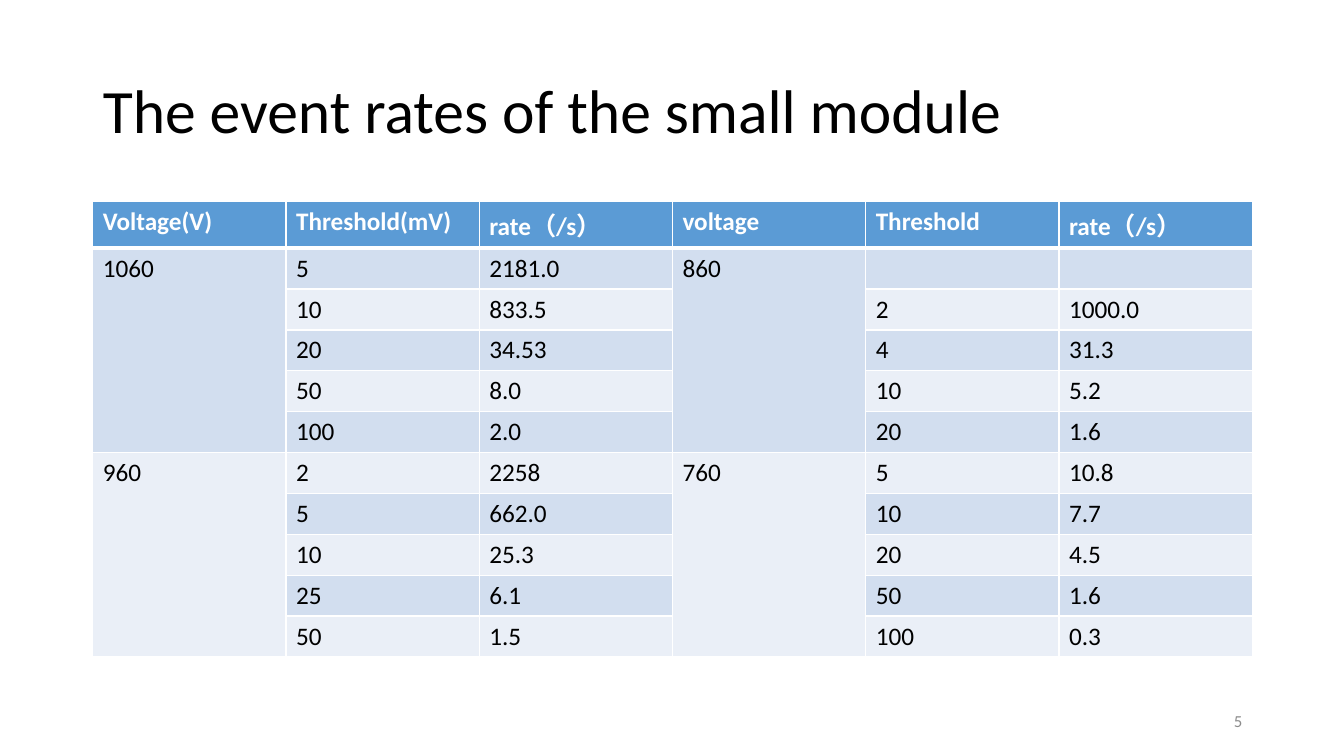
import pptx
import pptx.dml.color
import pptx.enum.text
import pptx.oxml
import pptx.oxml.ns
import pptx.util
from pptx.dml.color import RGBColor
from pptx.util import Inches

BLACK = RGBColor(0x00, 0x00, 0x00)
WHITE = RGBColor(0xFF, 0xFF, 0xFF)
GRAY = RGBColor(0x8C, 0x8C, 0x8C)
HEADER_BLUE = RGBColor(0x5B, 0x9B, 0xD5)
BAND_DARK = RGBColor(0xD2, 0xDE, 0xEF)
BAND_LIGHT = RGBColor(0xEA, 0xEF, 0xF7)

HEADINGS = ["Voltage(V)", "Threshold(mV)", "rate（/s）", "voltage", "Threshold", "rate（/s）"]
GROUP_SIZE = 5
LEFT_GROUPS = [
    ("1060", [("5", "2181.0"), ("10", "833.5"), ("20", "34.53"), ("50", "8.0"), ("100", "2.0")]),
    ("960", [("2", "2258"), ("5", "662.0"), ("10", "25.3"), ("25", "6.1"), ("50", "1.5")]),
]
RIGHT_GROUPS = [
    ("860", [("", ""), ("2", "1000.0"), ("4", "31.3"), ("10", "5.2"), ("20", "1.6")]),
    ("760", [("5", "10.8"), ("10", "7.7"), ("20", "4.5"), ("50", "1.6"), ("100", "0.3")]),
]


def write_text(frame, text, size=18, color=BLACK, bold=False, align=None, spacing=None):
    para = frame.paragraphs[0]
    para.alignment = align
    para.line_spacing = spacing
    para.font.size = pptx.util.Pt(size)
    if text:
        span = para.add_run()
        span.text = text
        span.font.name = "Calibri"
        span.font.size = pptx.util.Pt(size)
        span.font.bold = bold
        span.font.color.rgb = color


def set_borders(cell, top, bottom):
    properties = cell._tc.get_or_add_tcPr()
    widths = [("lnL", 1), ("lnR", 1), ("lnT", top), ("lnB", bottom)]
    for position, (side, points) in enumerate(widths):
        line = pptx.oxml.parse_xml(
            f'<a:{side} {pptx.oxml.ns.nsdecls("a")} w="{pptx.util.Pt(points)}">'
            f'<a:solidFill><a:srgbClr val="{WHITE}"/></a:solidFill></a:{side}>'
        )
        properties.insert(position, line)


def add_title(page, left, top, width, height):
    title = page.shapes.title
    title.left, title.top, title.width, title.height = left, top, width, height
    title.text_frame.vertical_anchor = pptx.enum.text.MSO_ANCHOR.MIDDLE
    write_text(title.text_frame, "The event rates of the small module", size=44,
               align=pptx.enum.text.PP_ALIGN.LEFT, spacing=0.9)


def fill_groups(table, groups, first_column):
    for group_index, (voltage, readings) in enumerate(groups):
        first_row = 1 + group_index * GROUP_SIZE
        voltage_cell = table.cell(first_row, first_column)
        write_text(voltage_cell.text_frame, voltage)
        for row, reading in enumerate(readings, first_row):
            for column, value in enumerate(reading, first_column + 1):
                write_text(table.cell(row, column).text_frame, value)
        voltage_cell.merge(table.cell(first_row + GROUP_SIZE - 1, first_column))


def add_rate_table(page, left, top, width, height):
    row_count = 1 + GROUP_SIZE * len(LEFT_GROUPS)
    table = page.shapes.add_table(row_count, len(HEADINGS), left, top, width, height).table
    for column, heading in enumerate(HEADINGS):
        write_text(table.cell(0, column).text_frame, heading, color=WHITE, bold=True)
    for row in range(row_count):
        band = HEADER_BLUE if row == 0 else BAND_DARK if row % 2 else BAND_LIGHT
        for column in range(len(HEADINGS)):
            cell = table.cell(row, column)
            cell.fill.solid()
            cell.fill.fore_color.rgb = band
            set_borders(cell, top=3 if row == 1 else 1, bottom=3 if row == 0 else 1)
    fill_groups(table, LEFT_GROUPS, 0)
    fill_groups(table, RIGHT_GROUPS, 3)


def add_page_number(page, left, top, width, height):
    box = page.shapes.add_textbox(left, top, width, height)
    box.text_frame.word_wrap = True
    box.text_frame.vertical_anchor = pptx.enum.text.MSO_ANCHOR.MIDDLE
    write_text(box.text_frame, "5", size=12, color=GRAY, align=pptx.enum.text.PP_ALIGN.RIGHT)


def main():
    deck = pptx.Presentation()
    deck.slide_width = Inches(13.33)
    deck.slide_height = Inches(7.5)
    page = deck.slides.add_slide(deck.slide_layouts[5])
    add_title(page, Inches(0.92), Inches(0.4), Inches(11.5), Inches(1.45))
    add_rate_table(page, Inches(0.92), Inches(2), Inches(11.5), Inches(4.46))
    add_page_number(page, Inches(9.42), Inches(6.95), Inches(3), Inches(0.4))
    deck.save("out.pptx")


if __name__ == "__main__":
    main()
